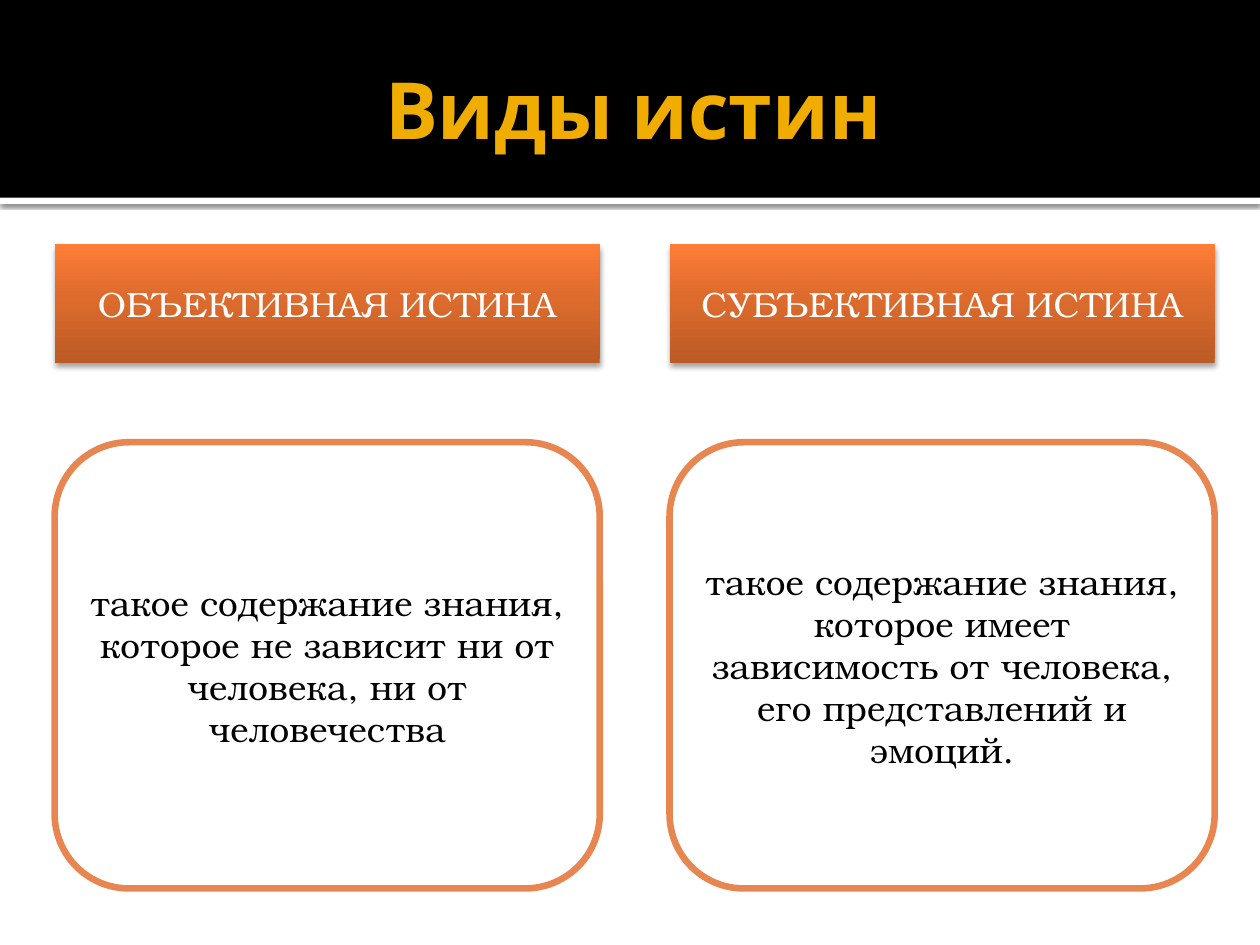
from pptx import Presentation
from pptx.dml.color import RGBColor
from pptx.enum.shapes import MSO_SHAPE
from pptx.enum.text import MSO_ANCHOR, MSO_AUTO_SIZE, PP_ALIGN
from pptx.oxml import parse_xml
from pptx.oxml.ns import nsdecls, qn
from pptx.util import Pt

RECTANGLE = MSO_SHAPE.RECTANGLE
ROUNDED = MSO_SHAPE.ROUNDED_RECTANGLE
MIDDLE = MSO_ANCHOR.MIDDLE
CENTER = PP_ALIGN.CENTER
NO_AUTOFIT = MSO_AUTO_SIZE.NONE
TITLE_ONLY = 5

COLORS = {
    "white": "FFFFFF",
    "black": "000000",
    "gold": "F0AD00",
    "border": "E88651",
    "dark": "BC5B26",
    "orange": "DD6B2D",
    "bright": "FF7D37",
}
HEADER_STOPS = [(0, "dark"), (55, "orange"), (100, "bright")]
TITLE_FONT = "Cabin"
BODY_FONT = "TeX Gyre Bonum"

SLIDE_WIDTH, SLIDE_HEIGHT = 720, 540
BAND_HEIGHT = 113
COLUMN_LEFT, COLUMN_STEP, COLUMN_WIDTH = 31.2, 351.4, 311.5
TRUTHS = [
    ("ОБЪЕКТИВНАЯ ИСТИНА",
     "такое содержание знания, которое не зависит ни от человека, ни от человечества"),
    ("СУБЪЕКТИВНАЯ ИСТИНА",
     "такое содержание знания, которое имеет зависимость от человека, "
     "его представлений и эмоций."),
]


class SlideBuilder:
    def __init__(self, slide):
        self.slide = slide

    def color(self, name):
        return RGBColor.from_string(COLORS[name])

    def add_text(self, shape, text, font, size, color, bold=False):
        frame = shape.text_frame
        frame.word_wrap = True
        frame.auto_size = NO_AUTOFIT
        frame.vertical_anchor = MIDDLE
        paragraph = frame.paragraphs[0]
        paragraph.alignment = CENTER
        run = paragraph.add_run()
        run.text = text
        run.font.name = font
        run.font.size = Pt(size)
        run.font.bold = bold
        run.font.color.rgb = self.color(color)

    def box(self, kind, left, top, width, height, fill="white"):
        shape = self.slide.shapes.add_shape(
            kind, Pt(left), Pt(top), Pt(width), Pt(height))
        shape.shadow.inherit = False
        shape.fill.solid()
        shape.fill.fore_color.rgb = self.color(fill)
        shape.line.fill.background()
        return shape

    def cast_shadow(self, shape, opacity, blur, distance):
        effects = shape._element.spPr.find(qn("a:effectLst"))
        effects.append(parse_xml(
            f'<a:outerShdw {nsdecls("a")} blurRad="{Pt(blur)}" dist="{Pt(distance)}" '
            f'dir="5400000" algn="t" rotWithShape="0"><a:srgbClr val="{COLORS["black"]}">'
            f'<a:alpha val="{opacity * 1000}"/></a:srgbClr></a:outerShdw>'))

    def shade(self, shape, stops):
        properties = shape._element.spPr
        stop_xml = "".join(
            f'<a:gs pos="{position * 1000}"><a:srgbClr val="{COLORS[name]}"/></a:gs>'
            for position, name in stops)
        properties.replace(properties.find(qn("a:solidFill")), parse_xml(
            f'<a:gradFill {nsdecls("a")} rotWithShape="1"><a:gsLst>{stop_xml}</a:gsLst>'
            '<a:lin ang="16200000" scaled="0"/></a:gradFill>'))

    def band(self, top, height, fill):
        shape = self.box(RECTANGLE, 0, top, SLIDE_WIDTH, height, fill)
        self.slide.shapes.title._element.addprevious(shape._element)
        return shape

    def title(self, text):
        title = self.slide.shapes.title
        title.left, title.top, title.width, title.height = Pt(36), Pt(12.2), Pt(648), Pt(98.6)
        frame = title.text_frame
        frame.margin_left = Pt(7.2)
        frame.margin_right = frame.margin_top = frame.margin_bottom = Pt(3.6)
        self.add_text(title, text, TITLE_FONT, 45, "gold", bold=True)

    def definition(self, left, text):
        shape = self.box(ROUNDED, left, 252.7, COLUMN_WIDTH, 255)
        shape.line.color.rgb = self.color("border")
        shape.line.width = Pt(3.78)
        self.add_text(shape, text, BODY_FONT, 20, "black")

    def header(self, left, text):
        shape = self.box(RECTANGLE, left, 139.6, COLUMN_WIDTH, 67.7)
        self.shade(shape, HEADER_STOPS)
        self.cast_shadow(shape, 38, 3.1, 2)
        self.add_text(shape, text, BODY_FONT, 20, "white")


def main():
    presentation = Presentation()
    presentation.slide_width, presentation.slide_height = Pt(SLIDE_WIDTH), Pt(SLIDE_HEIGHT)
    builder = SlideBuilder(presentation.slides.add_slide(presentation.slide_layouts[TITLE_ONLY]))

    stripe = builder.band(BAND_HEIGHT, 3.6, "white")
    builder.cast_shadow(stripe, 60, 2.5, 0.8)
    builder.band(0, BAND_HEIGHT, "black")
    builder.title("Виды истин")

    for index, (name, meaning) in enumerate(TRUTHS):
        left = COLUMN_LEFT + index * COLUMN_STEP
        builder.definition(left, meaning)
        builder.header(left, name)

    presentation.save("out.pptx")


if __name__ == "__main__":
    main()
